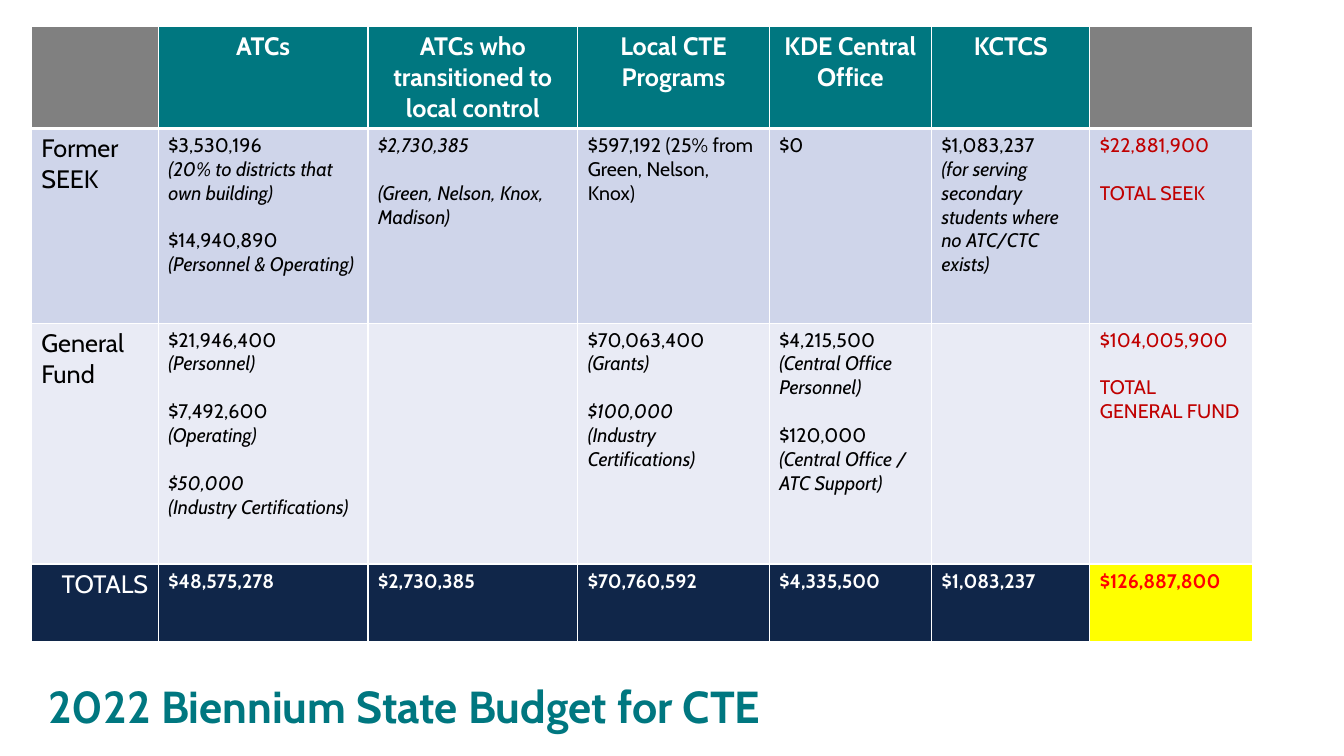
"""Build the 2022 CTE state budget slide."""
from lxml import etree
from pptx import Presentation, util as u
from pptx.dml.color import RGBColor
from pptx.enum import text
from pptx.oxml.ns import qn

TEAL = RGBColor(0x00, 0x77, 0x80)
GRAY = RGBColor(0x80, 0x80, 0x80)
NAVY = RGBColor(0x10, 0x26, 0x49)
LAVENDER = RGBColor(0xCF, 0xD5, 0xEA)
PALE = RGBColor(0xE9, 0xEB, 0xF5)
YELLOW = RGBColor(0xFF, 0xFF, 0x00)
RED = RGBColor(0xFF, 0x00, 0x00)
DARK_RED = RGBColor(0xC0, 0x00, 0x00)
WHITE = RGBColor(0xFF, 0xFF, 0xFF)
BLACK = RGBColor(0x00, 0x00, 0x00)

LEFT, CENTER, RIGHT = text.PP_ALIGN.LEFT, text.PP_ALIGN.CENTER, text.PP_ALIGN.RIGHT
COLUMNS = [1.26, 2.08, 2.08, 1.9, 1.61, 1.57, 1.61]
ROWS = [1.0, 1.93, 2.39, 0.77]

# Each cell is a list of groups of lines; a leading * marks an italic line.
HEADERS = [[], [["ATCs"]], [["ATCs who transitioned to local control"]],
           [["Local CTE Programs"]], [["KDE Central Office"]], [["KCTCS"]], []]
SEEK = [
    [["Former SEEK"]],
    [["$3,530,196", "*(20% to districts that own building)"],
     ["$14,940,890", "*(Personnel & Operating)"]],
    [["*$2,730,385"], ["*(Green, Nelson, Knox, Madison)"]],
    [["$597,192 (25% from Green, Nelson, Knox)"]],
    [["$0"]],
    [["$1,083,237", "*(for serving secondary students where no ATC/CTC exists)"]],
    [["$22,881,900"], ["TOTAL SEEK"]],
]
GENERAL = [
    [["General Fund"]],
    [["$21,946,400", "*(Personnel)"], ["$7,492,600", "*(Operating)"],
     ["*$50,000", "*(Industry Certifications)"]],
    [],
    [["$70,063,400", "*(Grants)"], ["*$100,000", "*(Industry Certifications)"]],
    [["$4,215,500", "*(Central Office Personnel)"],
     ["$120,000", "*(Central Office / ATC Support)"]],
    [],
    [["$104,005,900"], ["TOTAL GENERAL FUND"]],
]
TOTALS = [[[total]] for total in (
    "TOTALS", "$48,575,278", "$2,730,385", "$70,760,592", "$4,335,500",
    "$1,083,237", "$126,887,800")]


def write(p, words, size=14, color=BLACK, bold=False, italic=False, align=LEFT, before=0):
    """Add one formatted run to a paragraph."""
    p.alignment = align
    if before:
        p.space_before = u.Pt(before)
    r = p.add_run()
    r.text = words
    r.font.name = "Cabin"
    r.font.size = u.Pt(size)
    r.font.bold = bold
    r.font.italic = italic
    r.font.color.rgb = color


class Deck:
    """Hold the presentation style and the current slide."""

    def __init__(self):
        """Start a wide presentation with one blank slide."""
        self.prs = Presentation()
        self.prs.slide_width = u.Inches(13.33)
        self.prs.slide_height = u.Inches(7.5)
        self.s = self.prs.slides.add_slide(self.prs.slide_layouts[6])

    def title(self, words, left, top, width, height):
        """Add the slide title."""
        sp = self.s.shapes.add_textbox(*map(u.Inches, (left, top, width, height)))
        tf = sp.text_frame
        tf.word_wrap = True
        write(tf.paragraphs[0], words, size=32, color=TEAL, bold=True)

    def table(self, left, top, columns, rows):
        """Add an unstyled table with the given column widths and row heights."""
        box = map(u.Inches, (left, top, sum(columns), sum(rows)))
        tbl = self.s.shapes.add_table(len(rows), len(columns), *box).table
        tbl.first_row = tbl.horz_banding = False
        for column, width in zip(tbl.columns, columns):
            column.width = u.Inches(width)
        for row, height in zip(tbl.rows, rows):
            row.height = u.Inches(height)
        return tbl

    def borders(self, cell, top=1, bottom=1):
        """Draw white lines around a cell."""
        tc_pr = cell._tc.get_or_add_tcPr()
        for side, width in zip("LRTB", (1, 1, top, bottom)):
            ln = etree.SubElement(tc_pr, qn(f"a:ln{side}"), w=str(u.Pt(width)))
            fill = etree.SubElement(ln, qn("a:solidFill"))
            etree.SubElement(fill, qn("a:srgbClr"), val=str(WHITE))

    def cell(self, cell, groups, fill, top=1, bottom=1, **style):
        """Fill a cell with groups of lines set apart by one line of space."""
        self.borders(cell, top, bottom)
        cell.fill.solid()
        cell.fill.fore_color.rgb = fill
        tf = cell.text_frame
        lines = [(line, 17 if g and not i else 0)
                 for g, group in enumerate(groups) for i, line in enumerate(group)]
        for n, (line, before) in enumerate(lines):
            p = tf.add_paragraph() if n else tf.paragraphs[0]
            write(p, line.removeprefix("*"), italic=line.startswith("*"),
                  before=before, **style)


def main():
    """Build and save the slide."""
    deck = Deck()
    tbl = deck.table(0.31, 0.26, COLUMNS, ROWS)
    for c, groups in enumerate(HEADERS):
        deck.cell(tbl.cell(0, c), groups, TEAL if groups else GRAY, bottom=3,
                  size=18, color=WHITE, bold=True, align=CENTER)
    last = len(COLUMNS) - 1
    for r, (row, fill) in enumerate([(SEEK, LAVENDER), (GENERAL, PALE)], 1):
        for c, groups in enumerate(row):
            deck.cell(tbl.cell(r, c), groups, fill, top=3 if r == 1 else 1,
                      size=14 if c else 18, color=DARK_RED if c == last else BLACK)
    for c, groups in enumerate(TOTALS):
        deck.cell(tbl.cell(3, c), groups, YELLOW if c == last else NAVY,
                  size=14 if c else 18, color=RED if c == last else WHITE,
                  bold=c > 0, align=LEFT if c else RIGHT)
    deck.title("2022 Biennium State Budget for CTE", 0.38, 6.68, 7.45, 0.64)
    deck.prs.save("out.pptx")


if __name__ == "__main__":
    main()
